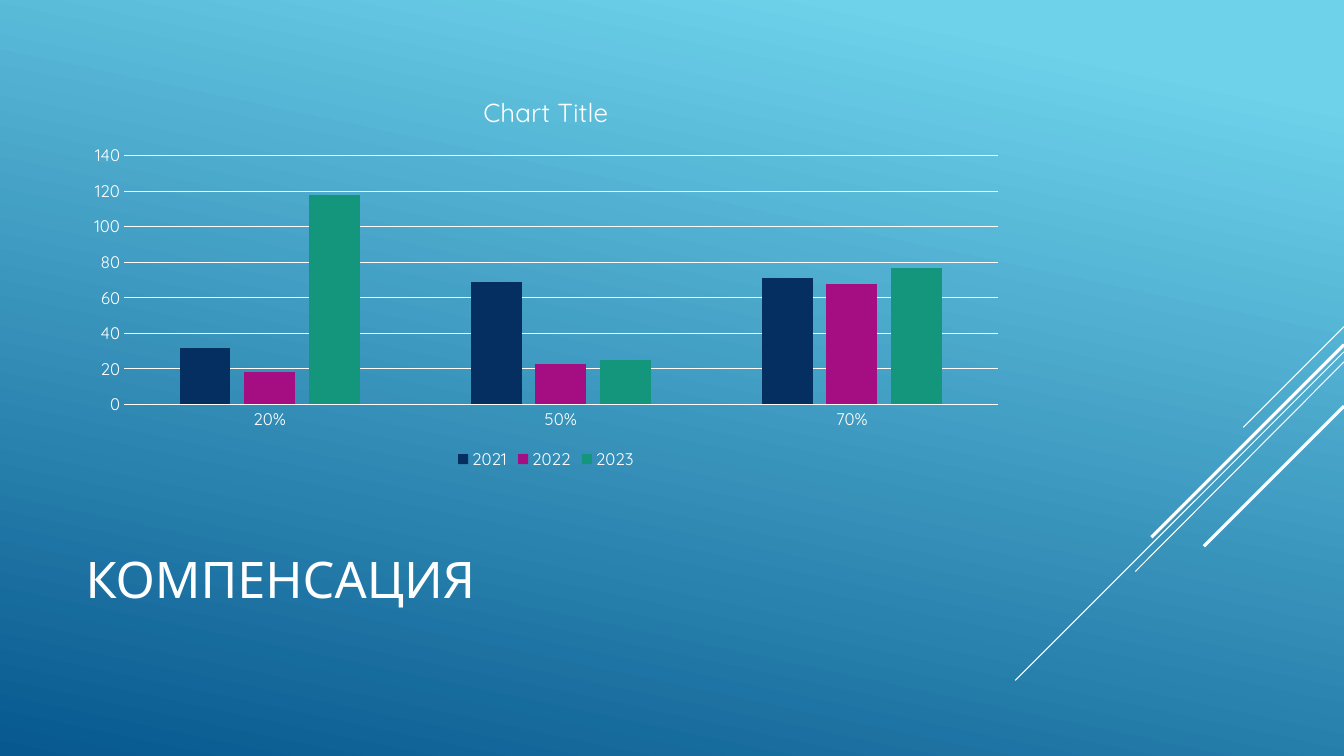
from dataclasses import dataclass

import pptx
import pptx.chart.data
import pptx.dml.color
import pptx.enum.chart
import pptx.enum.shapes
import pptx.enum.text
import pptx.oxml
import pptx.oxml.ns
import pptx.util
from pptx.util import Inches

FONT = "Quicksand"
COLORS = {
    "white": "FFFFFF",
    "sky": "6ED2EB",
    "deep": "06588E",
    "navy": "052F61",
    "magenta": "A50E82",
    "green": "14967C",
}


@dataclass
class Ray:
    """A diagonal line that starts at the right edge of the page."""
    top: float
    left: float
    bottom: float
    width: float


@dataclass
class YearSeries:
    year: str
    values: tuple[int, ...]
    color: str


RAYS = [
    Ray(3.24, 12.33, 4.24, 0.75),
    Ray(3.49, 10.07, 6.75, 0.75),
    Ray(3.59, 11.26, 5.67, 0.75),
    Ray(3.42, 11.42, 5.33, 2.25),
    Ray(4.03, 11.94, 5.42, 2.25),
]
SHARES = (0.2, 0.5, 0.7)
YEARS = [
    YearSeries("2021", (32, 69, 71), "navy"),
    YearSeries("2022", (18, 23, 68), "magenta"),
    YearSeries("2023", (118, 25, 77), "green"),
]


def rgb(name: str) -> pptx.dml.color.RGBColor:
    return pptx.dml.color.RGBColor.from_string(COLORS[name])


def style_font(font, size: float) -> None:
    font.name = FONT
    font.size = pptx.util.Pt(size)
    font.bold = False
    font.color.rgb = rgb("white")


def style_line(line, width: float) -> None:
    line.color.rgb = rgb("white")
    line.width = pptx.util.Pt(width)


def paint_background(page) -> None:
    fill = page.background.fill
    fill.gradient()
    fill.gradient_angle = 360 - 102
    for stop, position, color in zip(fill.gradient_stops, (0.1, 1), ("sky", "deep")):
        stop.position = position
        stop.color.rgb = rgb(color)


def draw_ray(page, ray: Ray) -> None:
    line = page.shapes.add_connector(
        pptx.enum.shapes.MSO_CONNECTOR.STRAIGHT,
        Inches(13.33), Inches(ray.top), Inches(ray.left), Inches(ray.bottom))
    style_line(line.line, ray.width)
    properties = line._element.spPr
    properties.append(pptx.oxml.parse_xml(
        f"<a:effectLst {pptx.oxml.ns.nsdecls('a')}/>"))


def draw_title(page, text: str) -> None:
    box = page.shapes.add_textbox(Inches(0.75), Inches(4.91), Inches(9.33), Inches(1.65))
    frame = box.text_frame
    frame.word_wrap = True
    frame.vertical_anchor = pptx.enum.text.MSO_ANCHOR.MIDDLE
    frame.text = text
    style_font(frame.paragraphs[0].runs[0].font, 36)


def style_axes(chart) -> None:
    for axis in (chart.category_axis, chart.value_axis):
        axis.major_tick_mark = pptx.enum.chart.XL_TICK_MARK.NONE
        axis.minor_tick_mark = pptx.enum.chart.XL_TICK_MARK.NONE
        style_font(axis.tick_labels.font, 12)
    shares, amounts = chart.category_axis, chart.value_axis
    shares.tick_labels.number_format = "0%"
    shares.tick_labels.number_format_is_linked = False
    style_line(shares.format.line, 0.75)
    amounts.minimum_scale, amounts.maximum_scale, amounts.major_unit = 0, 140, 20
    amounts.format.line.fill.background()
    style_line(amounts.major_gridlines.format.line, 0.75)


def draw_chart(page) -> None:
    data = pptx.chart.data.CategoryChartData()
    data.categories = SHARES
    data.categories.number_format = "0%"
    for series in YEARS:
        data.add_series(series.year, series.values)
    chart = page.shapes.add_chart(
        pptx.enum.chart.XL_CHART_TYPE.COLUMN_CLUSTERED,
        Inches(0.75), Inches(0.75), Inches(9.33), Inches(3.95), data).chart
    style_font(chart.font, 10)

    # Heading and legend
    heading = chart.chart_title.text_frame
    heading.text = "Chart Title"
    style_font(heading.paragraphs[0].runs[0].font, 18.6)
    chart.chart_title.include_in_layout = False
    chart.has_legend = True
    chart.legend.position = pptx.enum.chart.XL_LEGEND_POSITION.BOTTOM
    chart.legend.include_in_layout = False
    style_font(chart.legend.font, 12)

    # Columns
    plot = chart.plots[0]
    plot.vary_by_categories = False
    plot.gap_width = 219
    plot.overlap = -27
    for column, series in zip(plot.series, YEARS):
        column.format.fill.solid()
        column.format.fill.fore_color.rgb = rgb(series.color)
    style_axes(chart)


def main() -> None:
    deck = pptx.Presentation()
    deck.slide_width, deck.slide_height = Inches(13.33), Inches(7.5)
    page = deck.slides.add_slide(deck.slide_layouts[6])
    paint_background(page)
    for ray in RAYS:
        draw_ray(page, ray)
    draw_title(page, "КОМПЕНСАЦИЯ")
    draw_chart(page)
    deck.save("out.pptx")


if __name__ == "__main__":
    main()
